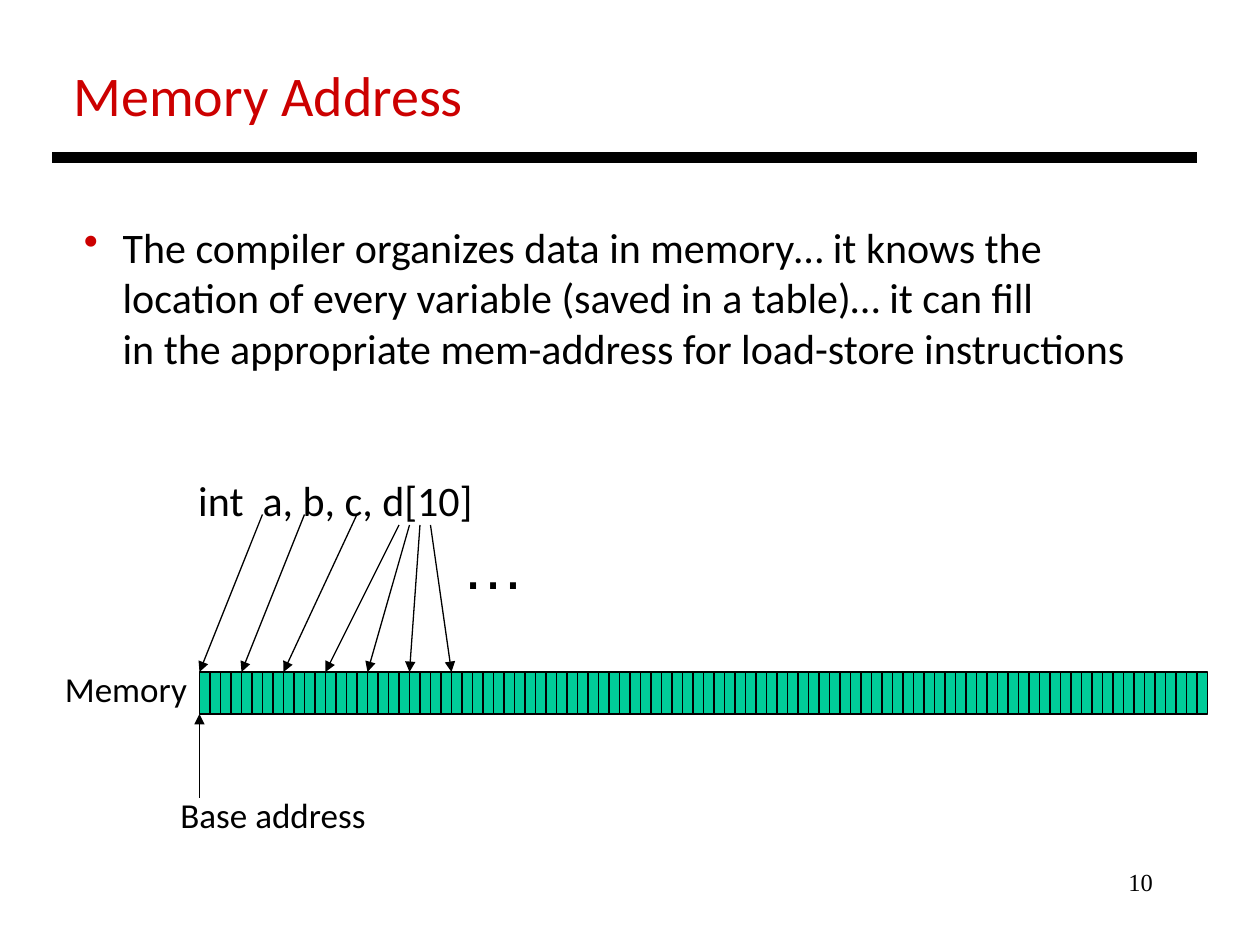
from lxml import etree
from pptx import Presentation
from pptx.dml.color import RGBColor
from pptx.enum.shapes import MSO_CONNECTOR, MSO_SHAPE
from pptx.enum.text import MSO_ANCHOR, MSO_AUTO_SIZE, PP_ALIGN
from pptx.oxml.ns import qn
from pptx.util import Pt

PX = 7620
BLACK = RGBColor(0x00, 0x00, 0x00)
RED = RGBColor(0xCC, 0x00, 0x00)
GREEN = RGBColor(0x00, 0xCC, 0x99)
STRAIGHT = MSO_CONNECTOR.STRAIGHT
RECTANGLE = MSO_SHAPE.RECTANGLE
TOP = MSO_ANCHOR.TOP
NO_AUTOFIT = MSO_AUTO_SIZE.NONE
LEFT, RIGHT = PP_ALIGN.LEFT, PP_ALIGN.RIGHT

COMPILER_LINES = [
    "The compiler organizes data in memory… it knows the",
    "location of every variable (saved in a table)… it can fill",
    "in the appropriate mem-address for load-store instructions",
]
DECLARATION = "int  a, b, c, d[10]"
BYTE_COUNT, BYTE_WIDTH, BYTES_PER_INT = 96, 10, 4
VARIABLE_STARTS = [(60, -150), (100, -150), (150, -150),
                   (190, -140), (200, -140), (210, -140), (220, -140)]


def scaled(*lengths):
    """Turn px lengths into EMU."""
    return [length * PX for length in lengths]


def fill_text(frame, lines, size, font="Calibri", color=BLACK, align=LEFT):
    """Write lines as paragraphs in one common format."""
    frame.text = "\n".join(lines)
    frame.word_wrap = True
    frame.auto_size = NO_AUTOFIT
    frame.vertical_anchor = TOP
    for paragraph in frame.paragraphs:
        paragraph.alignment = align
        for run in paragraph.runs:
            run.font.size = Pt(size)
            run.font.name = font
            run.font.color.rgb = color


def add_label(slide, box, lines, size, **style):
    """Add a text box and return its frame."""
    frame = slide.shapes.add_textbox(*scaled(*box)).text_frame
    fill_text(frame, lines, size, **style)
    return frame


def add_line(slide, ends, width, arrow=False):
    """Add a black straight line, with an arrowhead at its end if asked."""
    line = slide.shapes.add_connector(STRAIGHT, *scaled(*ends))
    line.line.color.rgb = BLACK
    line.line.width = Pt(width)
    if arrow:
        etree.SubElement(line.line._get_or_add_ln(), qn("a:tailEnd"), type="triangle")
    etree.SubElement(line._element.spPr, qn("a:effectLst"))


def indent(paragraph, margin, first=0):
    """Set the left margin and first-line indent of a paragraph."""
    properties = paragraph._p.get_or_add_pPr()
    properties.set("marL", str(margin * PX))
    properties.set("indent", str(first * PX))
    return properties


def add_heading(slide, left, top, width):
    """Place the title and the thick rule below it."""
    title = slide.shapes.title
    title.left, title.top, title.width, title.height = scaled(left + 8, top, 400, 77)
    fill_text(title.text_frame, ["Memory Address"], 32, color=RED)
    add_line(slide, (left, top + 98, left + width, top + 98), 6)


def add_explanation(slide, box):
    """Place the bulleted explanation and the declaration below it."""
    frame = add_label(slide, box, COMPILER_LINES + [DECLARATION], 24)
    first, *continued, declaration = frame.paragraphs
    bullet = indent(first, 37, -37)
    bullet_color = etree.SubElement(bullet, qn("a:buClr"))
    etree.SubElement(bullet_color, qn("a:srgbClr"), val=str(RED))
    etree.SubElement(bullet, qn("a:buChar"), char="•")
    for paragraph in continued:
        indent(paragraph, 37)
    indent(declaration, 109)
    declaration.space_before = Pt(58)


def add_memory(slide, left, top, height):
    """Draw the row of bytes with its labels and address arrows."""
    for index in range(BYTE_COUNT):
        byte = slide.shapes.add_shape(
            RECTANGLE, *scaled(left + index * BYTE_WIDTH, top, BYTE_WIDTH, height))
        byte.shadow.inherit = False
        byte.fill.solid()
        byte.fill.fore_color.rgb = GREEN
        byte.line.color.rgb = BLACK
        byte.line.width = Pt(0.75)
    add_label(slide, (left - 140, top - 10, 146, 52), ["Memory"], 20)
    for index, (x, y) in enumerate(VARIABLE_STARTS):
        target = left + index * BYTES_PER_INT * BYTE_WIDTH
        add_line(slide, (left + x, top + y, target, top), 0.75, arrow=True)
    add_label(slide, (left + 238, top - 144, 84, 84), ["…"], 36, font="Arial")
    bottom = top + height
    add_line(slide, (left, bottom + 80, left, bottom), 0.75, arrow=True)
    add_label(slide, (left - 30, bottom + 70, 203, 53), ["Base address"], 20)


def main():
    """Build and save the slide."""
    deck = Presentation()
    deck.slide_width, deck.slide_height = scaled(1200, 900)
    slide = deck.slides.add_slide(deck.slide_layouts[5])
    add_heading(slide, 50, 52, 1090)
    add_explanation(slide, (68, 205, 1024, 302))
    add_memory(slide, 190, 640, 40)
    add_label(slide, (860, 820, 250, 60), ["10"], 14,
              font="Times New Roman", align=RIGHT)
    deck.save("out.pptx")


if __name__ == "__main__":
    main()
